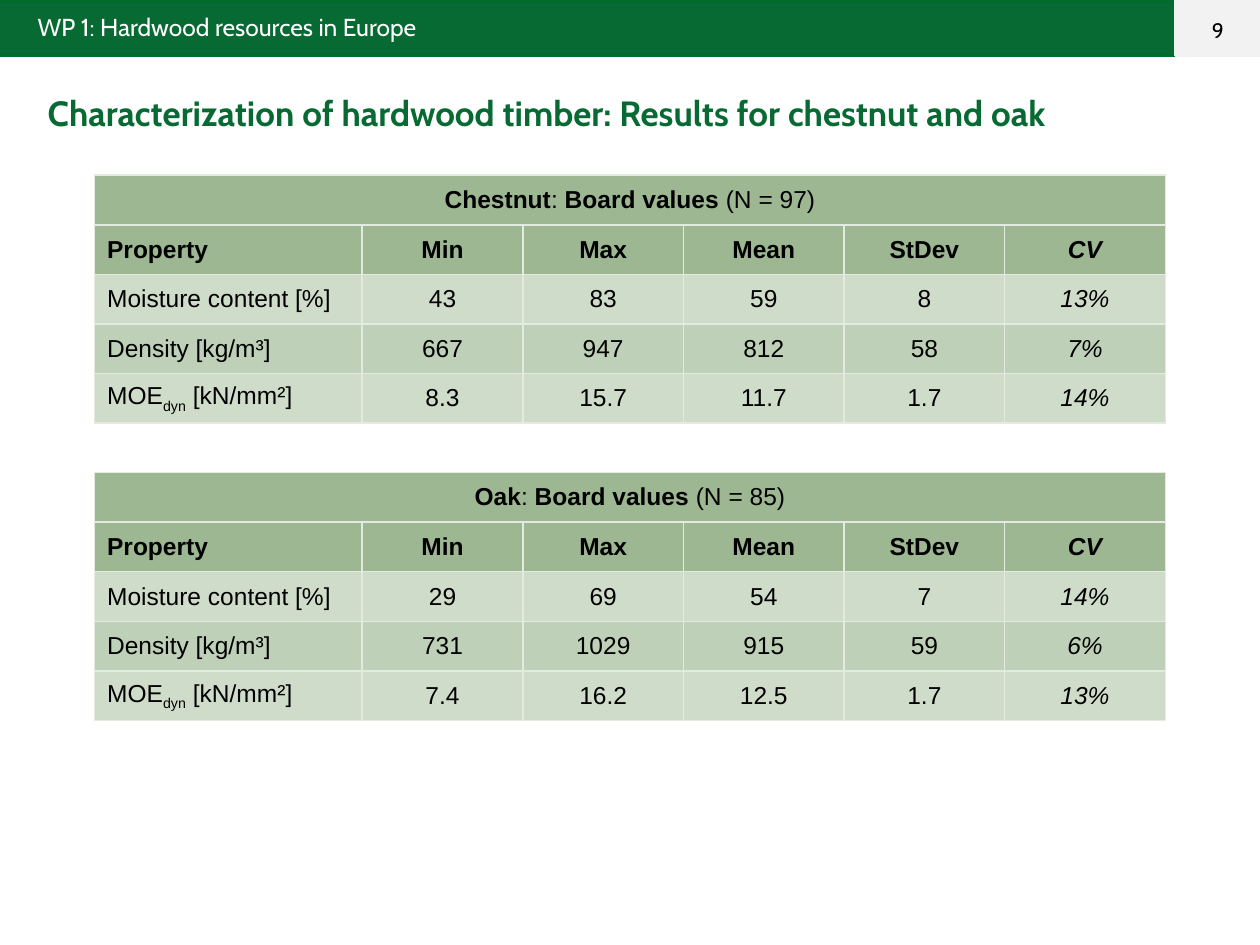
"""Build a slide with board value tables for chestnut and oak timber."""
from lxml import etree
from pptx import Presentation
from pptx.dml.color import RGBColor
from pptx.enum.shapes import MSO_SHAPE
from pptx.enum.text import MSO_ANCHOR, PP_ALIGN
from pptx.oxml.ns import qn
from pptx.util import Inches, Pt

RECTANGLE = MSO_SHAPE.RECTANGLE
MIDDLE = MSO_ANCHOR.MIDDLE
LEFT, CENTER = PP_ALIGN.LEFT, PP_ALIGN.CENTER

GREEN = RGBColor(0x08, 0x6A, 0x33)
DARK_GREEN = RGBColor(0x00, 0x6C, 0x2B)
PALE_GRAY = RGBColor(0xF2, 0xF2, 0xF2)
WHITE = RGBColor(0xFF, 0xFF, 0xFF)
BLACK = RGBColor(0, 0, 0)
HEADER_FILL = RGBColor(0x9D, 0xB7, 0x93)
BAND_FILLS = [RGBColor(0xCF, 0xDC, 0xCA), RGBColor(0xBF, 0xD0, 0xB8)]
BORDER = RGBColor(0xE3, 0xEB, 0xE0)

BARS = [
    (-0.12, 9.45, GREEN, DARK_GREEN),
    (9.33, 0.67, PALE_GRAY, PALE_GRAY),
]
LABELS = [
    ("WP 1: Hardwood resources in Europe", (0.2, 0.05, 8.48, 0.34), 14, WHITE, False, LEFT),
    ("9", (9.33, 0.09, 0.67, 0.3), 12, BLACK, False, CENTER),
    ("Characterization of hardwood timber: Results for chestnut and oak",
     (0.28, 0.68, 9.45, 0.44), 20, GREEN, True, LEFT),
]
COLUMN_TITLES = ["Property", "Min", "Max", "Mean", "StDev", "CV"]
PROPERTIES = [
    [("Moisture content [%]", 0)],
    [("Density [kg/m³]", 0)],
    [("MOE", 0), ("dyn", -25000), (" [kN/mm²]", 0)],
]
SPECIES = [
    ("Chestnut", "(N = 97)", [
        ["43", "83", "59", "8", "13%"],
        ["667", "947", "812", "58", "7%"],
        ["8.3", "15.7", "11.7", "1.7", "14%"],
    ]),
    ("Oak", "(N = 85)", [
        ["29", "69", "54", "7", "14%"],
        ["731", "1029", "915", "59", "6%"],
        ["7.4", "16.2", "12.5", "1.7", "13%"],
    ]),
]
TABLE_LEFT, TABLE_TOP, TABLE_STEP = 0.75, 1.39, 2.36
TABLE_WIDTH, TABLE_HEIGHT = 8.5, 1.97
PROPERTY_WIDTH = TABLE_WIDTH / 4


def add_run(paragraph, text, size, color, font_name, bold=False, italic=False):
    run = paragraph.add_run()
    run.text = text
    font = run.font
    font.size, font.name, font.bold, font.italic = Pt(size), font_name, bold, italic
    font.color.rgb = color
    return run


def add_bar(slide, left, width, fill, line):
    bar = slide.shapes.add_shape(RECTANGLE, Inches(left), 0, Inches(width), Inches(0.44))
    bar.shadow.inherit = False
    bar.fill.solid()
    bar.fill.fore_color.rgb = fill
    bar.line.color.rgb = line
    bar.line.width = Pt(2)


def add_label(slide, text, box, size, color, bold, alignment):
    label = slide.shapes.add_textbox(*map(Inches, box))
    label.text_frame.word_wrap = True
    paragraph = label.text_frame.paragraphs[0]
    paragraph.alignment = alignment
    add_run(paragraph, text, size, color, "Cabin", bold)


def style_cell(cell, fill):
    properties = cell._tc.get_or_add_tcPr()
    for side in ("a:lnL", "a:lnR", "a:lnT", "a:lnB"):
        line = etree.SubElement(properties, qn(side), w=str(Pt(1)))
        solid = etree.SubElement(line, qn("a:solidFill"))
        etree.SubElement(solid, qn("a:srgbClr"), val=str(BORDER))
    cell.fill.solid()
    cell.fill.fore_color.rgb = fill
    cell.vertical_anchor = MIDDLE


def write_cell(cell, parts, alignment, italic=False):
    paragraph = cell.text_frame.paragraphs[0]
    paragraph.alignment = alignment
    for text, bold, baseline in parts:
        run = add_run(paragraph, text, 14, BLACK, "Arial", bold, italic)
        if baseline:
            run.font._element.set("baseline", str(baseline))


def add_species_table(slide, top, species, count, values):
    rows = [[[(title, True, 0)] for title in COLUMN_TITLES]]
    for name_parts, numbers in zip(PROPERTIES, values):
        name = [(text, False, baseline) for text, baseline in name_parts]
        rows.append([name] + [[(number, False, 0)] for number in numbers])
    row_count, column_count = len(rows) + 1, len(COLUMN_TITLES)
    table = slide.shapes.add_table(
        row_count, column_count, Inches(TABLE_LEFT), Inches(top),
        Inches(TABLE_WIDTH), Inches(TABLE_HEIGHT)).table
    value_width = (TABLE_WIDTH - PROPERTY_WIDTH) / (column_count - 1)
    for index, column in enumerate(table.columns):
        column.width = Inches(value_width if index else PROPERTY_WIDTH)
    for index, row in enumerate(table.rows):
        row.height = Inches(TABLE_HEIGHT / row_count)
        for cell in row.cells:
            style_cell(cell, HEADER_FILL if index < 2 else BAND_FILLS[index % 2])
    heading = table.cell(0, 0)
    heading.merge(table.cell(0, column_count - 1))
    write_cell(heading, [(species, True, 0), (": ", False, 0),
                         ("Board values ", True, 0), (count, False, 0)], CENTER)
    for row_index, row in enumerate(rows, start=1):
        for column_index, parts in enumerate(row):
            write_cell(table.cell(row_index, column_index), parts,
                       CENTER if column_index else LEFT,
                       italic=column_index == column_count - 1)


def main():
    presentation = Presentation()
    presentation.slide_width, presentation.slide_height = Inches(10), Inches(7.5)
    slide = presentation.slides.add_slide(presentation.slide_layouts[6])
    for bar in BARS:
        add_bar(slide, *bar)
    for label in LABELS:
        add_label(slide, *label)
    for index, species in enumerate(SPECIES):
        add_species_table(slide, TABLE_TOP + index * TABLE_STEP, *species)
    presentation.save("out.pptx")


if __name__ == "__main__":
    main()
